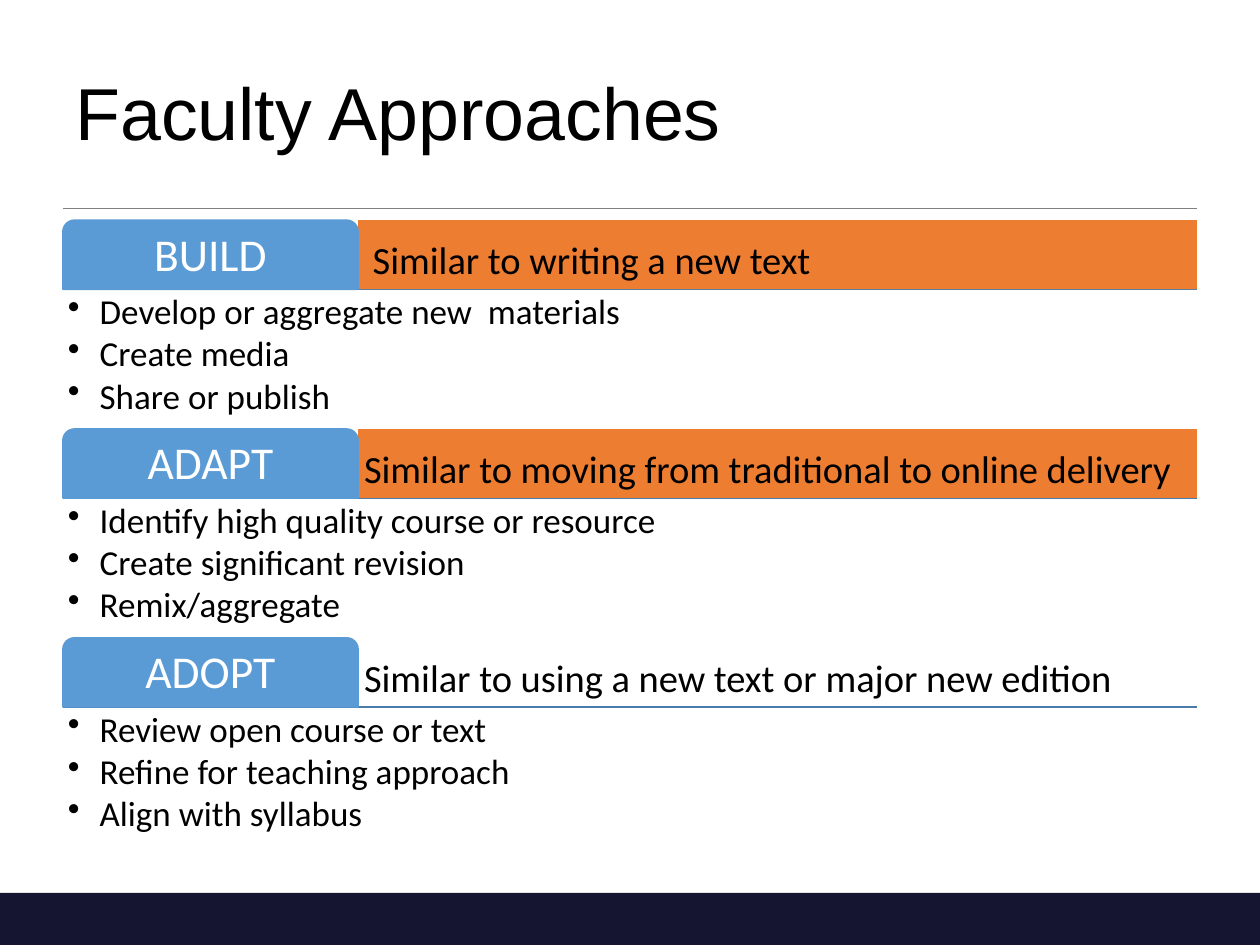
import dataclasses
import pptx
import pptx.dml.color
import pptx.enum.shapes
import pptx.enum.text
import pptx.oxml
import pptx.oxml.ns
import pptx.util

Cm = pptx.util.Cm
Pt = pptx.util.Pt
Shape = pptx.enum.shapes.MSO_SHAPE
Anchor = pptx.enum.text.MSO_ANCHOR
Align = pptx.enum.text.PP_ALIGN

COLORS = {"ink": "000000", "white": "FFFFFF", "navy": "161531", "gray": "808080",
          "blue": "5B9BD5", "rule": "497CAB", "orange": "ED7D31"}
LEFT, WIDTH, TAB = 1.27, 22.86, 5.95
TOP, HEAD, BODY, STEP = 4.44, 1.39, 2.77, 4.21


@dataclasses.dataclass
class Stage:
    name: str
    note: str
    items: list[str]
    fill: str | None = None


STAGES = [
    Stage("BUILD", " Similar to writing a new text",
          ["Develop or aggregate new  materials", "Create media", "Share or publish"], "orange"),
    Stage("ADAPT", "Similar to moving from traditional to online delivery",
          ["Identify high quality course or resource", "Create significant revision",
           "Remix/aggregate"], "orange"),
    Stage("ADOPT", "Similar to using a new text or major new edition",
          ["Review open course or text", "Refine for teaching approach", "Align with syllabus"]),
]


def rgb(name: str) -> pptx.dml.color.RGBColor:
    """Return the named colour."""
    return pptx.dml.color.RGBColor.from_string(COLORS[name])


def block(slide, kind, box: tuple, fill: str | None, line: str | None = None):
    """Draw a preset shape without shadow."""
    shape = slide.shapes.add_shape(kind, *map(Cm, box))
    shape.shadow.inherit = False
    if fill:
        shape.fill.solid()
        shape.fill.fore_color.rgb = rgb(fill)
    else:
        shape.fill.background()
    if line:
        shape.line.color.rgb = rgb(line)
        shape.line.width = Pt(1)
    else:
        shape.line.fill.background()
    return shape


def rule(slide, y: float, color: str, width: float) -> None:
    """Draw a horizontal line across the content."""
    line = slide.shapes.add_connector(pptx.enum.shapes.MSO_CONNECTOR.STRAIGHT,
                                      Cm(LEFT), Cm(y), Cm(LEFT + WIDTH), Cm(y))
    line.line.color.rgb = rgb(color)
    line.line.width = Pt(width)
    props = line._element.spPr
    props.append(props.makeelement(pptx.oxml.ns.qn("a:effectLst"), {}))


def write(shape, lines: list[str], size: float, color: str = "ink", font: str = "Calibri",
          anchor=Anchor.MIDDLE, align=Align.LEFT, pad: tuple = (0.12, 0.12), after: float = 0) -> None:
    """Fill a shape with paragraphs."""
    frame = shape.text_frame
    frame.word_wrap = True
    frame.vertical_anchor = anchor
    frame.margin_left = frame.margin_right = Cm(pad[0])
    frame.margin_top = frame.margin_bottom = Cm(pad[1])
    frame.text = "\n".join(lines)
    for par in frame.paragraphs:
        par.alignment = align
        par.line_spacing = 0.9
        par.space_after = Pt(after)
        par.font.size = Pt(size)
        par.font.name = font
        par.font.color.rgb = rgb(color)


def bullet(shape) -> None:
    """Give each paragraph a hanging bullet."""
    for par in shape.text_frame.paragraphs:
        props = par._p.get_or_add_pPr()
        props.set("marL", str(Cm(0.64)))
        props.set("indent", str(Cm(-0.64)))
        mark = props.makeelement(pptx.oxml.ns.qn("a:buChar"), {"char": "•"})
        props.insert_element_before(mark, "a:tabLst", "a:defRPr", "a:extLst")


def draw(slide, stage: Stage, top: float) -> None:
    """Draw one stage with its tab, bar and list."""
    base = top + HEAD
    bar = block(slide, Shape.RECTANGLE, (LEFT + TAB, top, WIDTH - TAB, HEAD), stage.fill)
    write(bar, [stage.note], 22, anchor=Anchor.BOTTOM)
    tab = block(slide, Shape.ROUND_2_SAME_RECTANGLE, (LEFT, top, TAB, HEAD), "blue", "blue")
    tab.adjustments[0] = 0.167
    tab.adjustments[1] = 0
    write(tab, [stage.name], 26, "white", align=Align.CENTER)
    body = slide.shapes.add_textbox(Cm(LEFT), Cm(base), Cm(WIDTH), Cm(BODY))
    write(body, stage.items, 20, anchor=Anchor.TOP, pad=(0.1, 0.1), after=2.6)
    bullet(body)


def main() -> None:
    """Build the slide."""
    deck = pptx.Presentation()
    deck.slide_width, deck.slide_height = Cm(25.4), Cm(19.05)
    slide = deck.slides.add_slide(deck.slide_layouts[6])
    block(slide, Shape.RECTANGLE, (-0.1, 18, 25.78, 1.1), "navy")
    rule(slide, 4.2, "gray", 0.1)
    title = slide.shapes.add_textbox(Cm(LEFT), Cm(0.76), Cm(WIDTH), Cm(3.18))
    write(title, ["Faculty Approaches"], 42, font="Arial", pad=(0.25, 0.13))
    tops = [TOP + STEP * row for row in range(len(STAGES))]
    for top in tops:
        rule(slide, top + HEAD, "rule", 1)
    for stage, top in zip(STAGES, tops):
        draw(slide, stage, top)
    deck.save("out.pptx")


if __name__ == "__main__":
    main()
